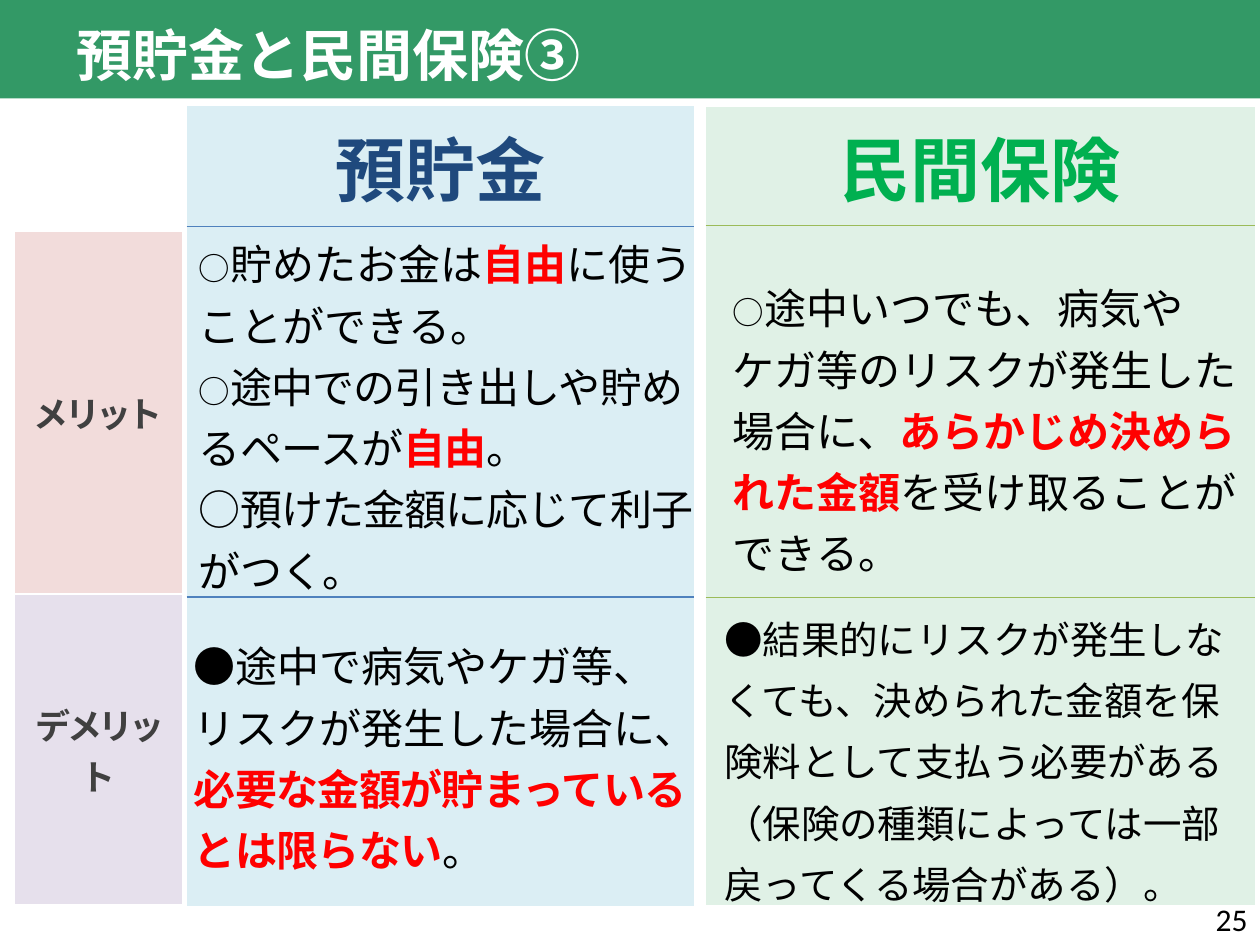
from dataclasses import dataclass
from typing import Any

from lxml.etree import SubElement
from pptx import Presentation
from pptx.dml.color import RGBColor
from pptx.enum.shapes import MSO_SHAPE as Shape
from pptx.enum.text import MSO_ANCHOR as Anchor, PP_ALIGN as Align
from pptx.oxml.ns import qn
from pptx.util import Pt


@dataclass(frozen=True)
class Theme:
    font: str = "Noto Sans CJK JP"
    number_font: str = "Calibri"
    banner: str = "339966"
    white: str = "FFFFFF"
    black: str = "000000"
    label: str = "404040"
    accent: str = "FF0000"
    savings: str = "1F497D"
    savings_fill: str = "DBEEF4"
    savings_line: str = "4F81BD"
    insurance: str = "00B050"
    insurance_fill: str = "E0F1E6"
    insurance_line: str = "9BBB59"
    merit_fill: str = "F2DCDB"
    demerit_fill: str = "E6E0EC"
    heading_size: int = 40
    title_size: int = 32
    body_size: int = 24
    compact_size: int = 22
    label_size: int = 20
    small_size: int = 18
    line_spacing: int = 35


@dataclass
class SlideBuilder:
    theme: Theme
    slide: Any

    def run(self, paragraph, text, size=None, color=None, bold=False,
            spacing=0, font=None):
        """Add one run of formatted text."""
        run = paragraph.add_run()
        run.text = text
        name = font or self.theme.font
        values = {"size": Pt(size or self.theme.body_size), "bold": bold, "name": name}
        for key, value in values.items():
            setattr(run.font, key, value)
        run.font.color.rgb = RGBColor.from_string(color or self.theme.black)
        properties = run.font._element
        SubElement(properties, qn("a:ea"), typeface=name)
        if spacing:
            properties.set("spc", str(round(spacing * 100)))

    def rectangle(self, box, fill):
        shape = self.slide.shapes.add_shape(Shape.RECTANGLE, *map(Pt, box))
        shape.shadow.inherit = False
        shape.fill.solid()
        shape.fill.fore_color.rgb = RGBColor.from_string(fill)
        shape.line.fill.background()

    def text(self, box, paragraphs, anchor=Anchor.TOP, align=Align.LEFT,
             line_spacing=None):
        """Each paragraph is a list of (text, format) runs."""
        frame = self.slide.shapes.add_textbox(*map(Pt, box)).text_frame
        frame.word_wrap = True
        frame.vertical_anchor = anchor
        for index, runs in enumerate(paragraphs):
            paragraph = frame.add_paragraph() if index else frame.paragraphs[0]
            paragraph.alignment = align
            if line_spacing:
                paragraph.line_spacing = Pt(line_spacing)
            for words, style in runs:
                self.run(paragraph, words, **style)

    def border(self, cell, side, color):
        line = SubElement(cell._tc.get_or_add_tcPr(), qn(f"a:ln{side}"),
                          w=str(Pt(1)))
        if color:
            fill = SubElement(line, qn("a:solidFill"))
            SubElement(fill, qn("a:srgbClr"), val=color)
        else:
            SubElement(line, qn("a:noFill"))

    def column(self, left, top, width, heights, texts, fills, line, style,
               outline=None):
        """One-column table with a rule between its rows."""
        table = self.slide.shapes.add_table(
            len(heights), 1, *map(Pt, (left, top, width, sum(heights)))).table
        table.first_row = table.horz_banding = False
        last = len(heights) - 1
        for index, (height, text, fill) in enumerate(zip(heights, texts, fills)):
            table.rows[index].height = Pt(height)
            cell = table.cell(index, 0)
            sides = {"L": outline, "R": outline,
                     "T": line if index else outline,
                     "B": line if index < last else outline}
            for side, color in sides.items():
                self.border(cell, side, color)
            cell.fill.solid()
            cell.fill.fore_color.rgb = RGBColor.from_string(fill)
            cell.vertical_anchor = Anchor.MIDDLE
            if text:
                paragraph = cell.text_frame.paragraphs[0]
                paragraph.alignment = Align.CENTER
                self.run(paragraph, text, bold=True, **style)


def main():
    theme = Theme()
    presentation = Presentation()
    presentation.slide_width, presentation.slide_height = Pt(720), Pt(540)
    slide = presentation.slides.add_slide(presentation.slide_layouts[6])
    builder = SlideBuilder(theme, slide)

    plain = {}
    mark = {"size": theme.small_size}
    strong = {"color": theme.accent, "bold": True}
    tight = {"spacing": -0.5}

    # Banner
    builder.rectangle((0, 0, 720, 56.2), theme.banner)

    # Comparison columns and row labels
    builder.column(106.6, 60.5, 290.2, (69.1, 211.7, 176.4), ("預貯金", "", ""),
                   [theme.savings_fill] * 3, theme.savings_line,
                   {"size": theme.heading_size, "color": theme.savings})
    builder.column(403.2, 61.2, 313.9, (67.7, 212.4, 175.7), ("民間保険", "", ""),
                   [theme.insurance_fill] * 3, theme.insurance_line,
                   {"size": theme.heading_size, "color": theme.insurance})
    builder.column(8, 132, 96.5, (207.4, 177.8), ("メリット", "デメリット"),
                   (theme.merit_fill, theme.demerit_fill), theme.white,
                   {"size": theme.label_size, "color": theme.label, "spacing": -2.1},
                   outline=theme.white)

    # Merits and demerits
    savings_merits = [
        [("○", mark), ("貯めたお金は", plain), ("自由", strong),
         ("に使うことができる。", plain)],
        [("○", mark), ("途中での引き出しや貯めるペースが", tight),
         ("自由", strong | tight), ("。", tight)],
        [("○預けた金額に応じて利子がつく。", tight)],
    ]
    savings_demerits = [
        [("●途中で病気やケガ等、リスクが発生した場合に、", plain),
         ("必要な金額が貯まっているとは限らない", strong | {"spacing": -0.4}),
         ("。", {"spacing": -0.4})],
    ]
    insurance_merits = [
        [("○", mark), ("途中いつでも、病気や　ケガ等のリスクが発生した場合に、", plain),
         ("あらかじめ決められた金額", strong), ("を受け取ることができる。", plain)],
    ]
    insurance_demerits = [
        [("●結果的にリスクが発生しなくても、決められた金額を保険料として"
          "支払う必要がある（保険の種類によっては一部戻ってくる場合がある）。",
          {"size": theme.compact_size})],
    ]
    for box, paragraphs in (
        ((106.6, 126.7, 300.2, 215.3), savings_merits),
        ((103.7, 356.4, 300.2, 144.7), savings_demerits),
        ((411.8, 151.9, 314.6, 144.7), insurance_merits),
        ((406.8, 339.8, 314.6, 179.3), insurance_demerits),
    ):
        builder.text(box, paragraphs, line_spacing=theme.line_spacing)

    # Title and page number
    title = {"size": theme.title_size, "color": theme.white, "bold": True}
    builder.text((36.7, 2.2, 550.8, 56.9), [[("預貯金と民間保険③", title)]],
                 anchor=Anchor.MIDDLE)
    builder.text((558, 510.5, 162, 28.8),
                 [[("25", mark | {"font": theme.number_font})]],
                 anchor=Anchor.MIDDLE, align=Align.RIGHT)

    presentation.save("out.pptx")


if __name__ == "__main__":
    main()
